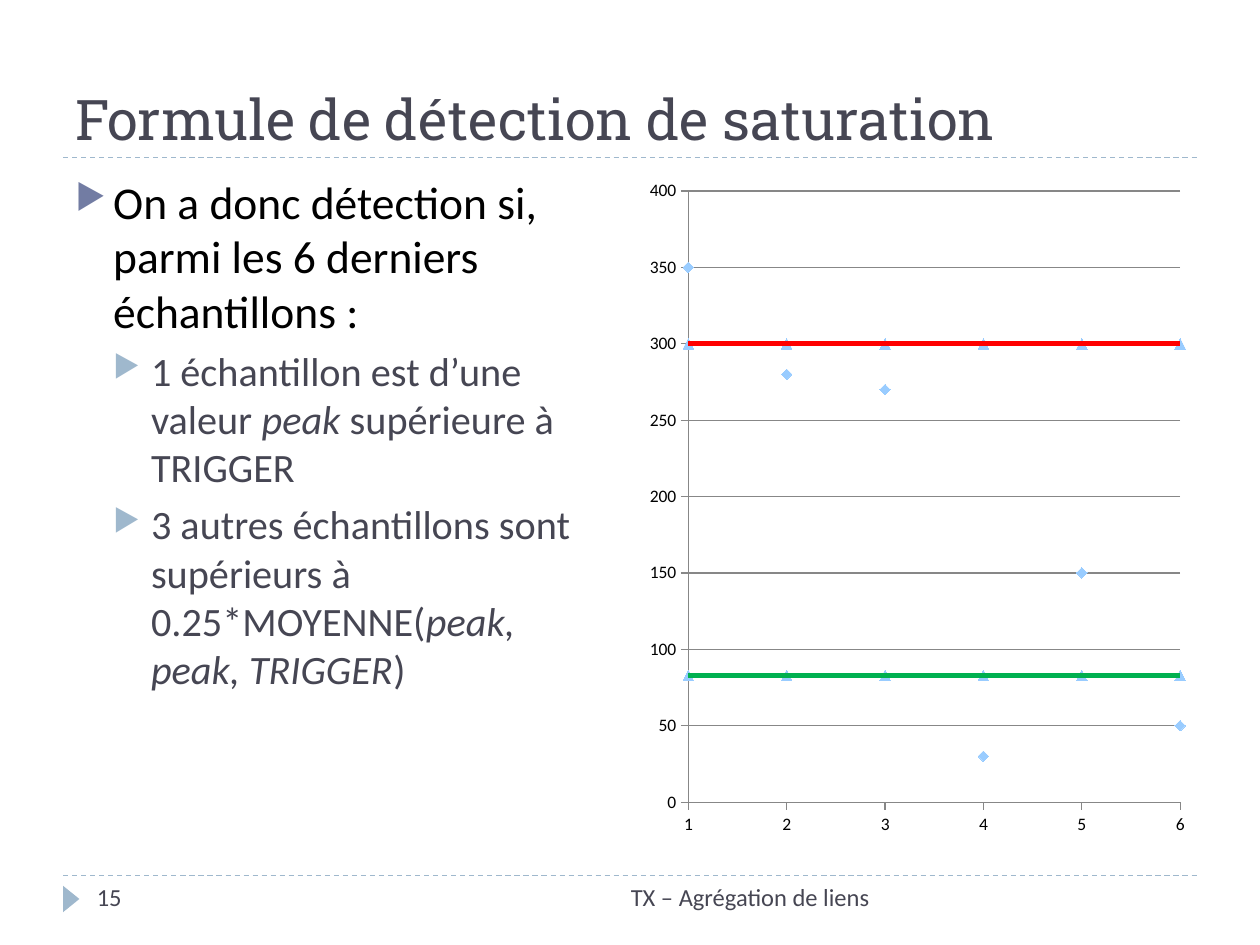
import pptx
import pptx.chart.data
import pptx.dml.color
import pptx.enum.chart
import pptx.enum.dml
import pptx.enum.shapes
import pptx.enum.text
import pptx.oxml
import pptx.oxml.ns
import pptx.util
from dataclasses import dataclass
from pptx.util import Inches


@dataclass(frozen=True)
class Theme:
    body_font: str = "Calibri"
    title_font: str = "Roboto Slab"
    dark: str = "464653"
    black: str = "000000"
    accent: str = "727CA3"
    pale: str = "9FB8CD"
    marker: str = "99CCFF"
    grid: str = "878787"
    trigger: str = "FF0000"
    threshold: str = "00B050"
    title_size: int = 32
    body_size: int = 26
    sub_size: int = 23
    footer_size: int = 14
    chart_size: int = 10


T = Theme()
NS = pptx.oxml.ns.nsdecls("a", "c")
RGB = pptx.dml.color.RGBColor.from_string
ANCHOR = pptx.enum.text.MSO_ANCHOR
ALIGN = pptx.enum.text.PP_ALIGN


def add_text(p, text, size, color=T.dark, font=T.body_font, align=None,
             level=None, bullet_color=None, before=0):
    """Fill a paragraph; every second part between asterisk pairs is italic."""
    for i, part in enumerate(text.split("**")):
        r = p.add_run()
        r.text = part
        r.font.name, r.font.size = font, pptx.util.Pt(size)
        r.font.color.rgb = RGB(color)
        r.font.italic = i % 2 == 1
    p.alignment = align
    p.space_before = pptx.util.Pt(before)
    if level is not None:
        p.level = level
        pPr = p._p.get_or_add_pPr()
        pPr.set("marL", str(Inches(0.3 * (level + 1))))
        pPr.set("indent", str(Inches(-0.3)))
        for xml in (f'<a:buClr {NS}><a:srgbClr val="{bullet_color}"/></a:buClr>',
                    f'<a:buSzPct {NS} val="76000"/>',
                    f'<a:buChar {NS} char="▶"/>'):
            pPr.append(pptx.oxml.parse_xml(xml))


def add_box(left, top, width, height, anchor=ANCHOR.TOP):
    tf = s.shapes.add_textbox(Inches(left), Inches(top),
                              Inches(width), Inches(height)).text_frame
    tf.word_wrap = True
    tf.vertical_anchor = anchor
    return tf


prs = pptx.Presentation()
prs.slide_width, prs.slide_height = Inches(10), Inches(7.5)
s = prs.slides.add_slide(prs.slide_layouts[6])

# Rules above the footer and below the title
for y in (6.95, 1.25):
    rule = s.shapes.add_connector(pptx.enum.shapes.MSO_CONNECTOR.STRAIGHT,
                                  Inches(0.5), Inches(y), Inches(9.5), Inches(y))
    rule.line.color.rgb = RGB(T.pale)
    rule.line.width = pptx.util.Pt(0.75)
    rule.line.dash_style = pptx.enum.dml.MSO_LINE.DASH
    rule._element.spPr.append(pptx.oxml.parse_xml(f"<a:effectLst {NS}/>"))

arrow = s.shapes.add_shape(pptx.enum.shapes.MSO_SHAPE.ISOSCELES_TRIANGLE,
                           Inches(0.46), Inches(7.07), Inches(0.21), Inches(0.13))
arrow.rotation = 90
arrow.shadow.inherit = False
arrow.fill.solid()
arrow.fill.fore_color.rgb = RGB(T.pale)
arrow.line.fill.background()

# Title and body
tf = add_box(0.5, 0.25, 9, 1, ANCHOR.BOTTOM)
add_text(tf.paragraphs[0], "Formule de détection de saturation",
         T.title_size, font=T.title_font)

tf = add_box(0.5, 1.33, 4.42, 5.4)
add_text(tf.paragraphs[0],
         "On a donc détection si, parmi les 6 derniers échantillons\u00a0:",
         T.body_size, color=T.black, level=0, bullet_color=T.accent, before=6)
for text in ("1 échantillon est d’une valeur **peak** supérieure à TRIGGER",
             "3 autres échantillons sont supérieurs à "
             "0.25*MOYENNE(**peak, peak, TRIGGER**)"):
    add_text(tf.add_paragraph(), text, T.sub_size, level=1,
             bullet_color=T.pale, before=5)

# Scatter chart: samples, trigger level and threshold level
MARKER = pptx.enum.chart.XL_MARKER_STYLE
series = [
    ("Series 1", [350, 280, 270, 30, 150, 50], MARKER.DIAMOND, None),
    ("Series 2", [300] * 6, MARKER.TRIANGLE, T.trigger),
    ("Series 3", [83] * 6, MARKER.TRIANGLE, T.threshold),
]
data = pptx.chart.data.XyChartData()
for name, values, *_ in series:
    points = data.add_series(name)
    for x, y in enumerate(values, 1):
        points.add_data_point(x, y)
chart = s.shapes.add_chart(pptx.enum.chart.XL_CHART_TYPE.XY_SCATTER,
                           Inches(5.07), Inches(1.33), Inches(4.42), Inches(5.4),
                           data).chart
chart.has_legend = False
chart.has_title = False
chart.font.name, chart.font.size = T.body_font, pptx.util.Pt(T.chart_size)
chart.font.color.rgb = RGB(T.black)
chart.plots[0].vary_by_categories = False

for ser, (_, _, style, trend_color) in zip(chart.plots[0].series, series):
    ser.format.line.fill.background()
    ser.marker.style, ser.marker.size = style, 6
    ser.marker.format.fill.solid()
    ser.marker.format.fill.fore_color.rgb = RGB(T.marker)
    ser.marker.format.line.fill.background()
    smooth = ser._element.get_or_add_smooth()
    smooth.val = False
    if trend_color:
        ser._element.find(pptx.oxml.ns.qn("c:xVal")).addprevious(pptx.oxml.parse_xml(
            f'<c:trendline {NS}><c:spPr><a:ln w="{pptx.util.Pt(3)}"><a:solidFill>'
            f'<a:srgbClr val="{trend_color}"/></a:solidFill></a:ln></c:spPr>'
            '<c:trendlineType val="linear"/><c:dispRSqr val="0"/>'
            '<c:dispEq val="0"/></c:trendline>'))

for axis, low, high, step in ((chart.category_axis, 1, 6, 1),
                              (chart.value_axis, 0, 400, 50)):
    axis.minimum_scale, axis.maximum_scale, axis.major_unit = low, high, step
    axis.major_tick_mark = pptx.enum.chart.XL_TICK_MARK.OUTSIDE
    axis.minor_tick_mark = pptx.enum.chart.XL_TICK_MARK.NONE
    axis.has_title = False
    axis.format.line.color.rgb = RGB(T.grid)
    axis.tick_labels.number_format = "General"
    axis.tick_labels.number_format_is_linked = False
chart.category_axis.has_major_gridlines = False
chart.value_axis.has_major_gridlines = True
chart.value_axis.major_gridlines.format.line.color.rgb = RGB(T.grid)

# Footer
tf = add_box(3.17, 6.95, 3.83, 0.4)
add_text(tf.paragraphs[0], "TX – Agrégation de liens", T.footer_size, align=ALIGN.RIGHT)
tf = add_box(0.67, 6.95, 2.17, 0.4)
add_text(tf.paragraphs[0], "15", T.footer_size)

prs.save("out.pptx")
